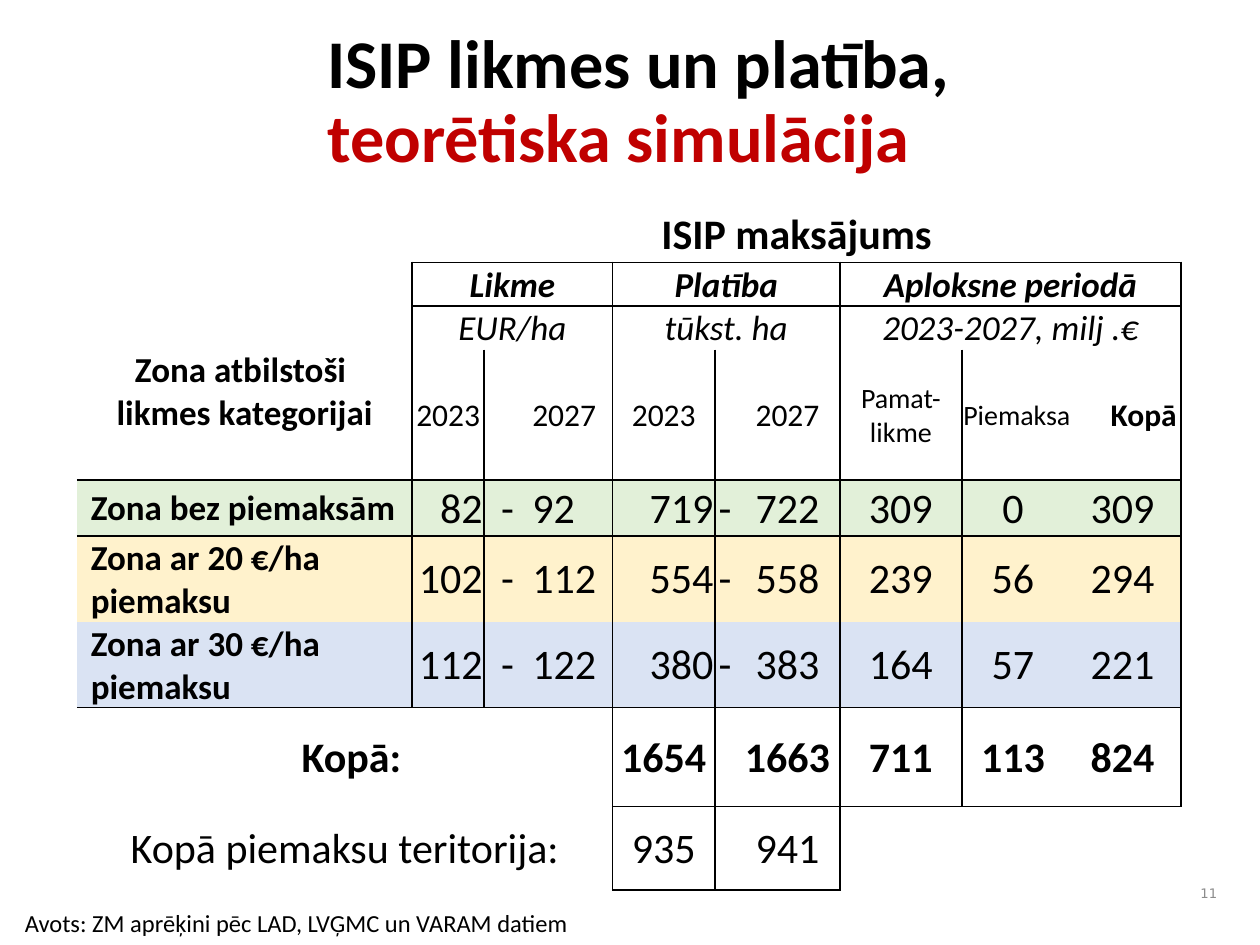
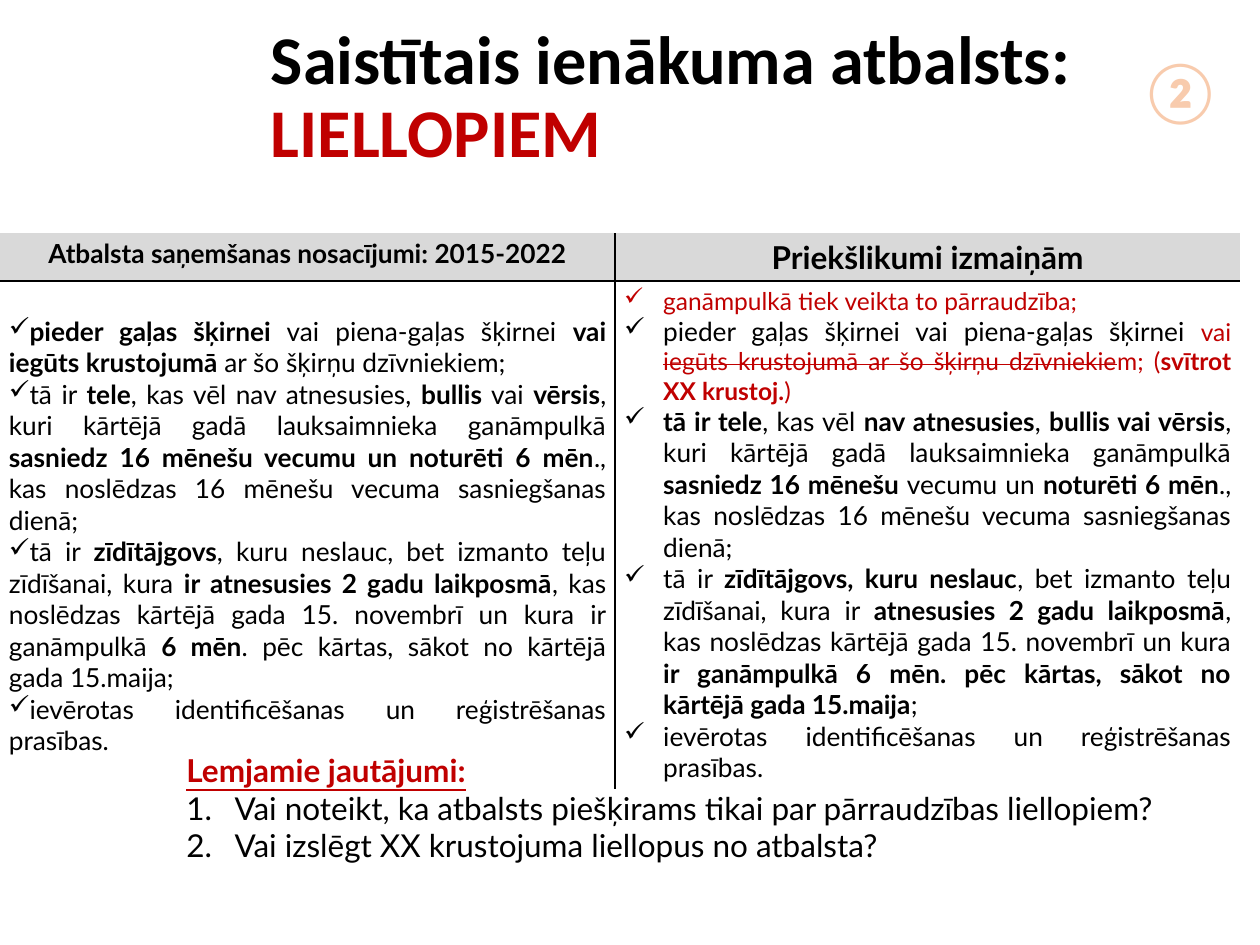
"""Builds two slides on ISIP payment rates and coupled support for cattle."""
from lxml import etree
from pptx import Presentation
from pptx import util as u
from pptx.dml.color import RGBColor
from pptx.enum import text
from pptx.oxml.ns import qn

COLOURS = {"ink": "000000", "red": "C00000", "grey": "8C8C8C", "head": "D9D9D9", "peach": "F8CBAD",
           "green": "E2F0D9", "yellow": "FFF2CC", "blue": "DAE3F3"}
PLAIN_TABLE = "{2D5ABB26-0587-4C30-8999-92F81FD0307C}"
EDGES = ["lnL", "lnR", "lnT", "lnB"]
LEFT, CENTER = text.PP_ALIGN.LEFT, text.PP_ALIGN.CENTER
RIGHT, JUSTIFY = text.PP_ALIGN.RIGHT, text.PP_ALIGN.JUSTIFY
TOP, MIDDLE, BOTTOM = text.MSO_ANCHOR.TOP, text.MSO_ANCHOR.MIDDLE, text.MSO_ANCHOR.BOTTOM


def marked(line):
    return [(part, "b" if i % 2 else "") for i, part in enumerate(line.split("*")) if part]


class Builder:
    def __init__(self):
        self.deck = Presentation()
        self.deck.slide_width, self.deck.slide_height = u.Cm(25.4), u.Cm(19.05)
        self.page = None
        self.owners = {}

    def new_page(self):
        self.page = self.deck.slides.add_slide(self.deck.slide_layouts[5])

    def fill_para(self, para, spans, size, font="Calibri", colour="ink", bold=False, italic=False,
                  align=LEFT, bullet=None, hang=0, spacing=None, underline=False):
        para.alignment = align
        if spacing:
            para.line_spacing = spacing
        if bullet:
            props = para._p.get_or_add_pPr()
            props.set("marL", str(u.Cm(hang)))
            props.set("indent", str(-u.Cm(hang)))
            if bullet == "1.":
                etree.SubElement(props, qn("a:buAutoNum"), type="arabicPeriod")
            else:
                etree.SubElement(props, qn("a:buChar"), char=bullet)
        para.font.size, para.font.name = u.Pt(size), font
        para.font.bold, para.font.italic, para.font.underline = bold, italic, underline
        para.font.color.rgb = RGBColor.from_string(COLOURS[colour])
        for words, flags in [(spans, "")] if isinstance(spans, str) else spans:
            span = para.add_run()
            span.text = words
            if "b" in flags:
                span.font.bold = True
            if "r" in flags:
                span.font.color.rgb = RGBColor.from_string(COLOURS["red"])
            if "e" in flags:
                span.font.size = u.Pt(14)
            if "s" in flags:
                span._r.get_or_add_rPr().set("strike", "sngStrike")

    def fill_frame(self, frame, lines, **style):
        for i, line in enumerate(lines):
            para = frame.paragraphs[0] if i == 0 else frame.add_paragraph()
            self.fill_para(para, line, **style)

    def title(self, lines, place, inset):
        box = self.page.shapes.title
        box.left, box.top, box.width, box.height = map(u.Cm, place)
        frame = box.text_frame
        frame.auto_size, frame.vertical_anchor = text.MSO_AUTO_SIZE.NONE, MIDDLE
        frame.margin_left = frame.margin_right = u.Cm(inset)
        frame.word_wrap = True
        self.fill_frame(frame, lines, size=39, bold=True, spacing=0.9)

    def label(self, lines, place, wrap=False, anchor=TOP, **style):
        frame = self.page.shapes.add_textbox(*map(u.Cm, place)).text_frame
        frame.word_wrap, frame.vertical_anchor = wrap, anchor
        self.fill_frame(frame, lines, **style)
        return frame

    def table(self, left, top, widths, heights):
        shape = self.page.shapes.add_table(len(heights), len(widths), u.Cm(left), u.Cm(top),
                                           u.Cm(sum(widths)), u.Cm(sum(heights)))
        grid = shape.table
        grid.first_row = grid.horz_banding = False
        grid._tbl.tblPr.find(qn("a:tableStyleId")).text = PLAIN_TABLE
        for column, width in zip(grid.columns, widths):
            column.width = u.Cm(width)
        for row, height in zip(grid.rows, heights):
            row.height = u.Cm(height)
        for cell in grid.iter_cells():
            cell.fill.background()
            cell.margin_left = cell.margin_right = cell.margin_top = u.Cm(0.03)
            cell.margin_bottom = 0
        self.owners = {}
        return grid

    def merge(self, grid, row, col, height, width):
        grid.cell(row, col).merge(grid.cell(row + height - 1, col + width - 1))
        for r in range(row, row + height):
            for c in range(col, col + width):
                self.owners[r, c] = (row, col)

    def cell(self, grid, row, col, lines, span=None, anchor=MIDDLE, **style):
        if span:
            self.merge(grid, row, col, *span)
        cell = grid.cell(row, col)
        cell.vertical_anchor = anchor
        self.fill_frame(cell.text_frame, lines, **style)
        return cell

    def shade(self, grid, row, colour):
        for cell in grid.rows[row].cells:
            cell.fill.solid()
            cell.fill.fore_color.rgb = RGBColor.from_string(COLOURS[colour])

    def edge(self, cell, side):
        props = cell._tc.get_or_add_tcPr()
        tag = qn("a:ln" + side)
        if props.find(tag) is not None:
            return
        line = etree.SubElement(props, tag, w=str(u.Pt(1)))
        etree.SubElement(etree.SubElement(line, qn("a:solidFill")), qn("a:srgbClr"), val=COLOURS["ink"])
        names = [qn("a:" + name) for name in EDGES]
        props[:] = sorted(props, key=lambda part: names.index(part.tag) if part.tag in names else 9)

    def outline(self, grid, top, left, bottom, right, sides="LRTB"):
        for row in range(top, bottom + 1):
            for col in range(left, right + 1):
                ends = {"L": col == left, "R": col == right, "T": row == top, "B": row == bottom}
                for side in sides:
                    if ends[side]:
                        self.edge(grid.cell(row, col), side)
                        self.edge(grid.cell(*self.owners.get((row, col), (row, col))), side)


def rates_page(build):
    build.new_page()
    build.title(["ISIP likmes un platība,", [("teorētiska simulācija", "r")]], (6.35, 0, 18.92, 4.17), 0.25)
    build.label(["Avots: ZM aprēķini pēc LAD, LVĢMC un VARAM datiem"], (0.25, 18.19, 11.56, 0.86), size=14)
    widths = [6.76, 1.45, 0.94, 1.65, 2.06, 0.41, 2.11, 2.46, 2.06, 0.91, 1.45]
    heights = [1.12, 0.87, 0.87, 1.68, 0.91, 1.12, 1.73, 1.73, 2, 1.68]
    grid = build.table(1.55, 4.17, widths, heights)
    build.cell(grid, 0, 0, ["Zona atbilstoši ", "likmes kategorijai"], (4, 1), BOTTOM,
               size=20, bold=True, align=CENTER)
    build.cell(grid, 0, 1, ["ISIP maksājums"], (1, 10), size=24, bold=True, align=CENTER)
    groups = [(1, 3, "Likme", "EUR/ha"), (4, 6, "Platība", "tūkst. ha"),
              (7, 10, "Aploksne periodā", "2023-2027, milj .€")]
    for first, last, name, unit in groups:
        span = (1, last - first + 1)
        build.cell(grid, 1, first, [name], span, size=20, bold=True, italic=True, align=CENTER)
        build.cell(grid, 2, first, [unit], span, size=20, italic=True, align=CENTER)
    years = {1: ("2023", CENTER), 2: ("", CENTER), 3: ("2027", LEFT),
             4: ("2023", CENTER), 5: ("", CENTER), 6: ("2027", CENTER)}
    for col, (year, align) in years.items():
        build.cell(grid, 3, col, [year] if year else [], (2, 1), size=18, align=align)
    build.cell(grid, 3, 7, ["Pamat-", "likme"], (2, 1), size=16, align=CENTER)
    build.cell(grid, 3, 8, ["Piemaksa"], (2, 2), size=16)
    build.cell(grid, 3, 10, ["Kopā"], (2, 1), size=18, bold=True)

    zones = [("Zona bez piemaksām", "green", "82 - 92 719 - 722 309 0 309"),
             ("Zona ar 20 €/ha piemaksu", "yellow", "102 - 112 554 - 558 239 56 294"),
             ("Zona ar 30 €/ha piemaksu", "blue", "112 - 122 380 - 383 164 57 221")]
    aligns = {1: RIGHT, 3: LEFT, 4: RIGHT}
    for row, (zone, colour, values) in enumerate(zones, 5):
        build.shade(grid, row, colour)
        name = build.cell(grid, row, 0, [zone], size=20, bold=True)
        name.margin_left = u.Cm(0.28)
        build.merge(grid, row, 9, 1, 2)
        for col, value in enumerate(values.split(), 1):
            build.cell(grid, row, col, [value], size=24, align=aligns.get(col, CENTER))

    build.cell(grid, 8, 0, ["Kopā: "], size=24, bold=True, align=RIGHT)
    build.merge(grid, 8, 9, 1, 2)
    for col, total in {4: "1654", 6: "1663", 7: "711", 8: "113", 9: "824"}.items():
        build.cell(grid, 8, col, [total], size=24, bold=True, align=CENTER)
    build.cell(grid, 9, 0, ["Kopā piemaksu teritorija:"], (1, 4), size=24, align=CENTER)
    build.merge(grid, 9, 9, 1, 2)
    for col, total in {4: "935", 6: "941"}.items():
        build.cell(grid, 9, col, [total], size=24, align=CENTER)

    build.outline(grid, 4, 0, 4, 0, "RB")
    build.outline(grid, 5, 0, 7, 0, "RTB")
    for first, last, *_ in groups:
        build.outline(grid, 1, first, 4, last)
        build.outline(grid, 5, first, 7, last)
        if first > 1:
            build.outline(grid, 8, first, 8, last)
    build.outline(grid, 9, 4, 9, 6)
    frame = build.label(["11"], (23.7, 17.58, 0.84, 0.84), anchor=MIDDLE, size=7.5,
                        font="DejaVu Sans", colour="grey", align=RIGHT)
    frame.margin_left = frame.margin_right = u.Cm(0)


def cattle_page(build):
    build.new_page()
    build.title([[("Saistītais ienākuma atbalsts: ", ""), ("LIELLOPIEM", "r")]],
                (5.28, 0.33, 20.12, 3.33), 0.18)
    frame = build.label(["Lemjamie jautājumi:"], (3.51, 15.01, 21.59, 2.57), wrap=True, size=18,
                        font="Lato", colour="red", bold=True, underline=True)
    for question in ["Vai noteikt, ka atbalsts piešķirams tikai par pārraudzības liellopiem?",
                     "Vai izslēgt XX krustojuma liellopus no atbalsta?"]:
        build.fill_para(frame.add_paragraph(), question, 18, "Lato", bullet="1.", hang=0.97)

    current = [
        "*pieder gaļas šķirnei* vai piena-gaļas šķirnei *vai iegūts krustojumā* ar šo šķirņu dzīvniekiem;",
        "tā ir *tele*, kas vēl nav atnesusies, *bullis* vai *vērsis*, kuri kārtējā gadā lauksaimnieka "
        "ganāmpulkā *sasniedz 16 mēnešu vecumu un noturēti 6 mēn*., kas noslēdzas 16 mēnešu vecuma "
        "sasniegšanas dienā;",
        "tā ir *zīdītājgovs*, kuru neslauc, bet izmanto teļu zīdīšanai, kura *ir atnesusies 2 gadu "
        "laikposmā*, kas noslēdzas kārtējā gada 15. novembrī un kura ir ganāmpulkā *6 mēn*. pēc kārtas, "
        "sākot no kārtējā gada 15.maija;",
        "ievērotas identificēšanas un reģistrēšanas prasības."]
    proposed = [
        "*tā ir tele*, kas vēl *nav atnesusies*, *bullis vai vērsis*, kuri kārtējā gadā lauksaimnieka "
        "ganāmpulkā *sasniedz 16 mēnešu* vecumu un *noturēti 6 mēn*., kas noslēdzas 16 mēnešu vecuma "
        "sasniegšanas dienā;",
        "tā ir *zīdītājgovs, kuru neslauc*, bet izmanto teļu zīdīšanai, kura ir *atnesusies 2 gadu "
        "laikposmā*, kas noslēdzas kārtējā gada 15. novembrī un kura *ir ganāmpulkā 6 mēn. pēc kārtas, "
        "sākot no kārtējā gada 15.maija*;",
        current[-1]]
    changes = [
        [("ganāmpulkā tiek veikta to pārraudzība;", "re")],
        [("pieder gaļas šķirnei vai piena-gaļas šķirnei ", ""), ("vai ", "re"),
         ("iegūts krustojumā ar šo šķirņu dzīvniekie", "res"), ("m; (", "re"),
         ("svītrot XX krustoj.", "reb"), (")", "re")]]

    grid = build.table(0, 4.7, [12.4, 12.6], [0.96, 10.2])
    for cell in grid.iter_cells():
        cell.margin_left = cell.margin_right = u.Cm(0.18)
        cell.margin_top = cell.margin_bottom = u.Cm(0.1)
    build.shade(grid, 0, "head")
    heads = [("Atbalsta saņemšanas nosacījumi: 2015-2022", 15), ("Priekšlikumi izmaiņām", 18)]
    for col, (head, size) in enumerate(heads):
        build.cell(grid, 0, col, [head], anchor=TOP, size=size, font="Lato", bold=True, align=CENTER)
    columns = [([marked(line) for line in current], 0),
               (changes + [marked(line) for line in proposed], 0.79)]
    for col, (lines, hang) in enumerate(columns):
        build.cell(grid, 1, col, lines, anchor=TOP, size=15, font="Lato", align=JUSTIFY,
                   bullet="✓", hang=hang)
    grid.cell(1, 0).margin_top = u.Cm(0.7)
    build.outline(grid, 0, 0, 0, 1, "B")
    build.outline(grid, 0, 0, 1, 0, "R")
    build.label(["②"], (22.91, 0.99, 2.08, 1.68), size=33, font="Lato", colour="peach", bold=True)


def main():
    build = Builder()
    rates_page(build)
    cattle_page(build)
    build.deck.save("out.pptx")


if __name__ == "__main__":
    main()
